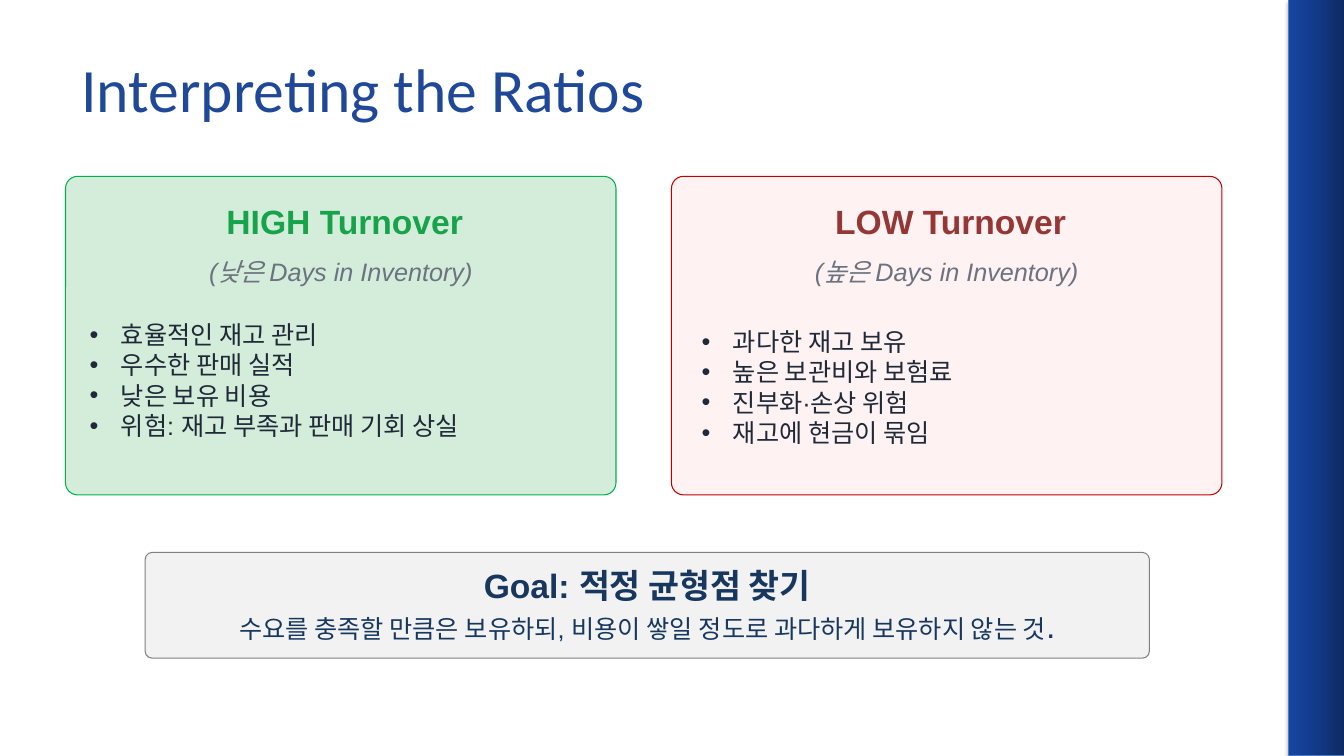
from copy import deepcopy
from lxml import etree
from pptx import Presentation
from pptx import util as u
from pptx.dml.color import RGBColor
from pptx.enum import shapes, text
from pptx.oxml import parse_xml
from pptx.oxml.ns import qn

PX = 9144
HUE = {
    "title": "1F4899", "navy": "17375E", "ink": "1F2937", "muted": "6B7280",
    "green": "16A34A", "red": "953735", "mint": "D4EDDA", "rose": "FEF2F2",
    "leaf": "00B050", "blood": "C00000", "pale": "F2F2F2", "grey": "808080",
    "edge": "4B7EBC", "dark": "0D2960", "mid": "123A89", "light": "1645A2",
}
SHADE = (
    '<a:effectLst xmlns:a="http://schemas.openxmlformats.org/drawingml/2006/main">'
    '<a:outerShdw blurRad="39370" dist="22860" dir="5400000" rotWithShape="0">'
    '<a:srgbClr val="000000"><a:alpha val="35000"/></a:srgbClr>'
    '</a:outerShdw></a:effectLst>'
)
MID = text.MSO_ANCHOR.MIDDLE
CENTER = text.PP_ALIGN.CENTER


def rgb(name):
    return RGBColor.from_string(HUE[name])


def style(font, size, color, bold=False, italic=False, face="Arial"):
    font.name, font.size = face, u.Pt(size)
    font.bold, font.italic = bold, italic
    font.color.rgb = rgb(color)


def add_run(para, words, *look, **more):
    run = para.add_run()
    run.text = words
    style(run.font, *look, **more)


def panel(slide, box, fill, line, radius):
    kind = shapes.MSO_SHAPE.ROUNDED_RECTANGLE
    shape = slide.shapes.add_shape(kind, *(n * PX for n in box))
    shape.shadow.inherit = False
    shape.adjustments[0] = radius / min(box[2:])
    shape.fill.solid()
    shape.fill.fore_color.rgb = rgb(fill)
    shape.line.color.rgb = rgb(line)
    shape.line.width = u.Pt(0.75)
    return shape


def label(slide, box, anchor=text.MSO_ANCHOR.TOP):
    frame = slide.shapes.add_textbox(*(n * PX for n in box)).text_frame
    frame.word_wrap = True
    frame.vertical_anchor = anchor
    return frame


def side_band(slide, box):
    kind = shapes.MSO_SHAPE.RECTANGLE
    band = slide.shapes.add_shape(kind, *(n * PX for n in box))
    band.fill.gradient()
    band.fill.gradient_angle = 180
    stops = band.fill._fill._gradFill.find(qn("a:gsLst"))
    stops.insert(1, deepcopy(stops[0]))
    for stop, place, name in zip(band.fill.gradient_stops, (0, 0.5, 1), ("dark", "mid", "light")):
        stop.position = place
        stop.color.rgb = rgb(name)
    band.line.color.rgb = rgb("edge")
    band.line.width = u.Pt(0.75)
    band._element.spPr.append(parse_xml(SHADE))


def title(slide, box, words):
    frame = label(slide, box, MID)
    frame.text = words
    style(frame.paragraphs[0].runs[0].font, 44, "title", face="Calibri")


def card(slide, box, fill, line, head, color, note, items, inset):
    left, top, width, height = box
    panel(slide, box, fill, line, 12)
    frame = label(slide, (left + 14, top + 13, width - 28, 88), MID)
    first, second = frame.paragraphs[0], frame.add_paragraph()
    add_run(first, " ", 20, color, True)
    add_run(first, head, 24, color, True)
    add_run(second, note, 18, "muted", italic=True)
    for para in frame.paragraphs:
        para.alignment, para.line_spacing = CENTER, 1.5

    dx, dy = inset
    frame = label(slide, (left + dx, top + dy, width - 28, 131))
    frame.text = "\n".join(items)
    for para in frame.paragraphs:
        props = para._p.get_or_add_pPr()
        props.set("marL", str(31 * PX))
        props.set("indent", str(-31 * PX))
        etree.SubElement(props, qn("a:buFont")).set("typeface", "Arial")
        etree.SubElement(props, qn("a:buChar")).set("char", "•")
        style(para.runs[0].font, 18, "ink")


def goal(slide, box, head, body):
    frame = panel(slide, box, "pale", "grey", 7).text_frame
    frame.word_wrap = True
    frame.vertical_anchor = MID
    first, second = frame.paragraphs[0], frame.add_paragraph()
    add_run(first, head, 24, "navy", True)
    add_run(second, body, 18, "navy")
    add_run(second, ".", 24, "navy")
    for para in frame.paragraphs:
        para.alignment = CENTER


def main():
    deck = Presentation()
    deck.slide_width, deck.slide_height = u.Inches(13.33), u.Inches(7.5)
    slide = deck.slides.add_slide(deck.slide_layouts[6])
    side_band(slide, (1278, 0, 56, 750))
    goal(slide, (144, 548, 996, 105), "Goal: 적정 균형점 찾기",
         "수요를 충족할 만큼은 보유하되, 비용이 쌓일 정도로 과다하게 보유하지 않는 것")
    title(slide, (71, 25, 1200, 125), "Interpreting the Ratios")
    cards = [
        ("mint", "leaf", "HIGH Turnover", "green", "(낮은 Days in Inventory)",
         ["효율적인 재고 관리", "우수한 판매 실적", "낮은 보유 비용",
          "위험: 재고 부족과 판매 기회 상실"], (14, 137)),
        ("rose", "blood", "LOW Turnover", "red", "(높은 Days in Inventory)",
         ["과다한 재고 보유", "높은 보관비와 보험료", "진부화·손상 위험",
          "재고에 현금이 묶임"], (20, 144)),
    ]
    for i, parts in enumerate(cards):
        card(slide, (65 + 601 * i, 175, 546, 316), *parts)
    deck.save("out.pptx")


if __name__ == "__main__":
    main()
